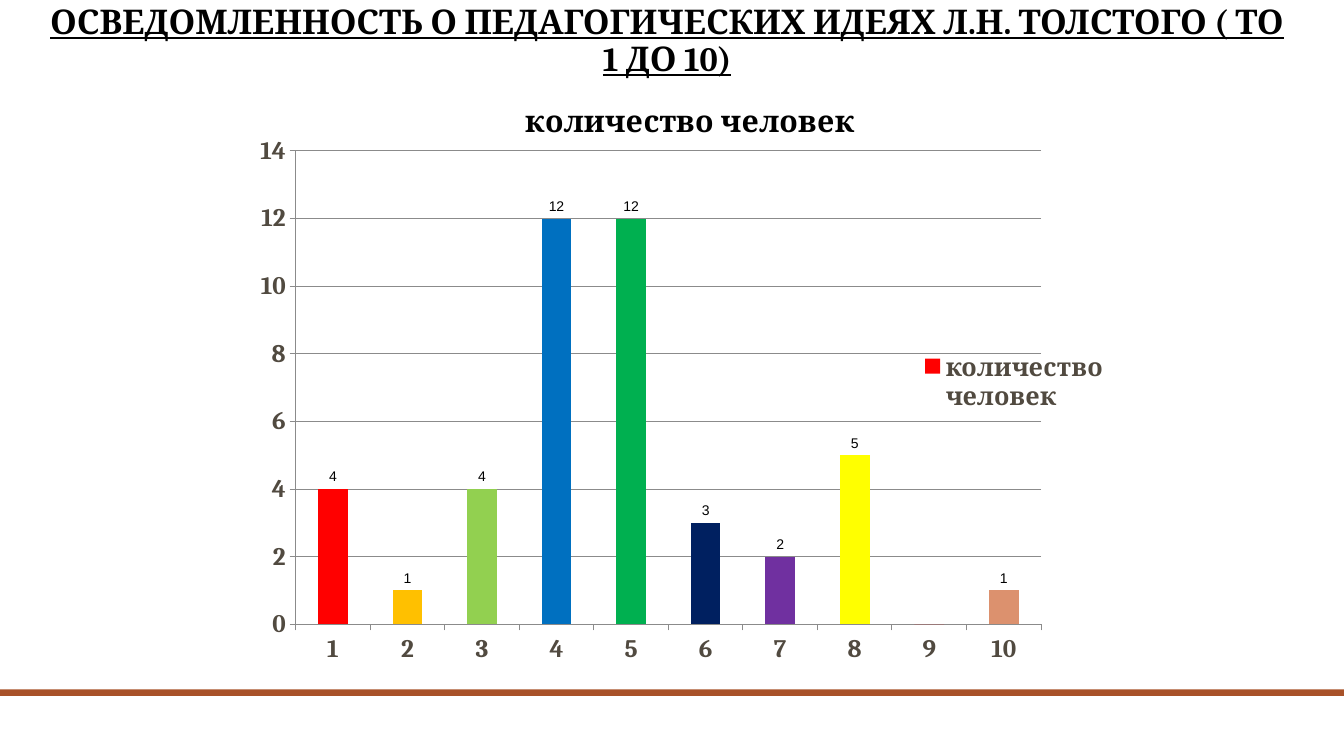
from lxml.etree import SubElement
from pptx import Presentation
from pptx.chart.data import CategoryChartData
from pptx.dml.color import RGBColor
from pptx.enum.chart import XL_CHART_TYPE, XL_LABEL_POSITION, XL_LEGEND_POSITION, XL_TICK_MARK
from pptx.enum.shapes import MSO_SHAPE
from pptx.enum.text import MSO_ANCHOR, PP_ALIGN
from pptx.oxml.ns import qn
from pptx.util import Pt

BLACK = RGBColor(0x00, 0x00, 0x00)
BROWN = RGBColor(0xA8, 0x52, 0x29)
TAUPE = RGBColor(0x51, 0x4A, 0x40)
GREY = RGBColor(0x8B, 0x8B, 0x8B)
BAR_COLORS = [RGBColor.from_string(code) for code in (
    "FF0000", "FFC000", "92D050", "0070C0", "00B050",
    "002060", "7030A0", "FFFF00", "FF0000", "DC916E")]
PEOPLE = [4, 1, 4, 12, 12, 3, 2, 5, 0, 1]
SERIES_NAME = "количество человек"


def style(font, size, color, name="Cambria", bold=True):
    font.name, font.size, font.bold = name, Pt(size), bold
    font.color.rgb = color


def set_layout(element, index, **fractions):
    """Place a chart part by hand, in fractions of the chart's size."""
    for old in element.findall(qn("c:layout")):
        element.remove(old)
    layout = SubElement(element, qn("c:layout"))
    element.insert(index, layout)
    manual = SubElement(layout, qn("c:manualLayout"))
    if "w" in fractions:
        SubElement(manual, qn("c:layoutTarget")).set("val", "inner")
    for mode in ("xMode", "yMode"):
        SubElement(manual, qn(f"c:{mode}")).set("val", "edge")
    for side, fraction in fractions.items():
        SubElement(manual, qn(f"c:{side}")).set("val", str(fraction))


presentation = Presentation()
presentation.slide_width, presentation.slide_height = Pt(960), Pt(540)
slide = presentation.slides.add_slide(presentation.slide_layouts[6])

footer_bar = slide.shapes.add_shape(MSO_SHAPE.RECTANGLE, 0, Pt(492.5), Pt(960), Pt(4.5))
footer_bar.shadow.inherit = False
footer_bar.fill.solid()
footer_bar.fill.fore_color.rgb = BROWN
footer_bar.line.fill.background()

heading = slide.shapes.add_textbox(Pt(17.3), Pt(30.2), Pt(918.7), Pt(29.5)).text_frame
heading.word_wrap = True
heading.vertical_anchor = MSO_ANCHOR.BOTTOM
heading.margin_left = heading.margin_right = Pt(14)
heading_line = heading.paragraphs[0]
heading_line.text = "ОСВЕДОМЛЕННОСТЬ О ПЕДАГОГИЧЕСКИХ ИДЕЯХ Л.Н. ТОЛСТОГО ( ТО 1 ДО 10)"
heading_line.alignment = PP_ALIGN.CENTER
heading_line.line_spacing = 0.9
style(heading_line.font, 24.3, BLACK)
heading_line.font.underline = True

awareness = CategoryChartData()
awareness.categories = [str(score) for score in range(1, 11)]
awareness.add_series(SERIES_NAME, PEOPLE)
chart = slide.shapes.add_chart(
    XL_CHART_TYPE.COLUMN_CLUSTERED, Pt(160), Pt(60), Pt(640), Pt(427), awareness).chart

chart.has_title = True
chart_title = chart.chart_title.text_frame.paragraphs[0]
chart_title.text = SERIES_NAME
style(chart_title.font, 21.6, BLACK)
set_layout(chart.chart_title._element, 1, x=0.33, y=0.02)
set_layout(chart._chartSpace.chart.plotArea, 0, x=0.08, y=0.112, w=0.832, h=0.792)

chart.has_legend = True
chart.legend.position = XL_LEGEND_POSITION.RIGHT
chart.legend.include_in_layout = True
style(chart.legend.font, 18, TAUPE)

for axis in (chart.category_axis, chart.value_axis):
    style(axis.tick_labels.font, 18, TAUPE)
    axis.major_tick_mark = XL_TICK_MARK.OUTSIDE
    axis.minor_tick_mark = XL_TICK_MARK.NONE
    axis.format.line.color.rgb = GREY
chart.value_axis.minimum_scale = 0
chart.value_axis.maximum_scale = 14
chart.value_axis.major_unit = 2
chart.value_axis.major_gridlines.format.line.color.rgb = GREY

columns = chart.plots[0]
columns.vary_by_categories = False
columns.gap_width = 150
people_series = columns.series[0]
people_series.format.fill.solid()
people_series.format.fill.fore_color.rgb = BAR_COLORS[0]
for index, (count, color) in enumerate(zip(PEOPLE, BAR_COLORS)):
    if not count:
        continue
    bar = people_series.points[index]
    bar.format.fill.solid()
    bar.format.fill.fore_color.rgb = color
    style(bar.data_label.font, 10, BLACK, "Arial", False)
    bar.data_label.position = XL_LABEL_POSITION.OUTSIDE_END

presentation.save("out.pptx")
